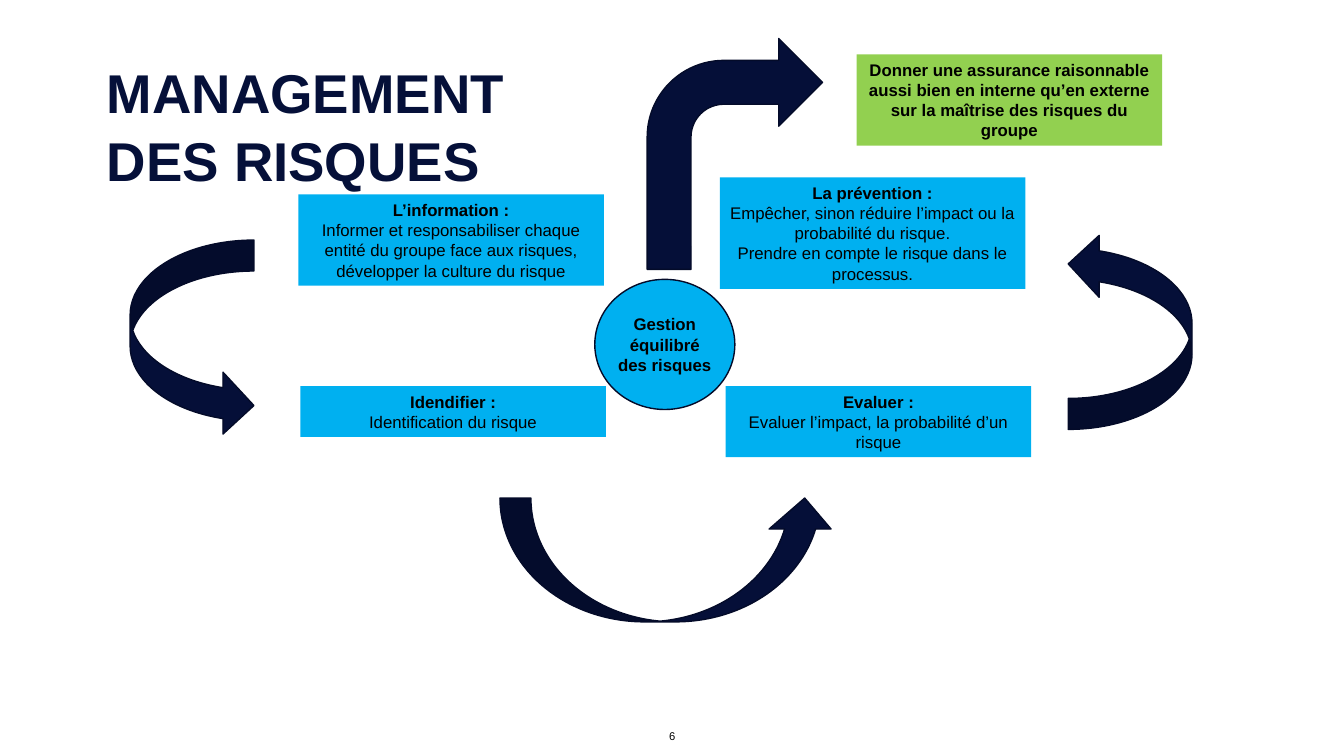
from pptx import Presentation
from pptx import util as u
from pptx.dml.color import RGBColor
from pptx.enum import shapes, text

COLOURS = {"navy": "050F38", "title": "051039", "edge": "040B29",
           "blue": "00B0F0", "green": "92D050", "black": "000000"}
KIND = shapes.MSO_SHAPE
FONT = "Arial"

# Content: lengths in cm
TITLE = "MANAGEMENT DES RISQUES"
HUB = "Gestion équilibré des risques"
PAGE_NUMBER = "6"
CARD_WIDTH, LINE_HEIGHT, CARD_PADDING = 7.7, 0.51, 0.26

# Left, top, text lines, fill, bold heading, plain paragraphs
CARDS = [
    (7.52, 4.9, 4, "blue", "L’information :",
     ["Informer et responsabiliser chaque entité du groupe face aux risques, "
      "développer la culture du risque"]),
    (18.14, 4.47, 5, "blue", "La prévention :",
     ["Empêcher, sinon réduire l’impact ou la probabilité du risque.",
      "Prendre en compte le risque dans le processus."]),
    (7.57, 9.73, 2, "blue", "Idendifier :", ["Identification du risque"]),
    (18.29, 9.73, 3, "blue", "Evaluer :",
     ["Evaluer l’impact, la probabilité d’un risque"]),
    (21.59, 1.37, 4, "green",
     "Donner une assurance raisonnable aussi bien en interne qu’en externe "
     "sur la maîtrise des risques du groupe", []),
]

# Preset, left, top, width, height, rotation
ARROWS = [
    (KIND.CURVED_RIGHT_ARROW, 3.28, 6.05, 3.12, 4.95, 0),
    (KIND.CURVED_RIGHT_ARROW, 15.27, 9.88, 3.12, 8.46, 270),
    (KIND.CURVED_RIGHT_ARROW, 26.92, 5.87, 3.12, 4.95, 180),
    (KIND.BENT_ARROW, 16.31, 0.97, 4.42, 5.82, 0),
]


def colour(name):
    return RGBColor.from_string(COLOURS[name])


def add_figure(page, preset, place, fill, outlined=False):
    figure = page.shapes.add_shape(preset, *map(u.Cm, place))
    figure.shadow.inherit = False
    figure.fill.solid()
    figure.fill.fore_color.rgb = colour(fill)
    if outlined:
        figure.line.color.rgb = colour("edge")
        figure.line.width = u.Pt(1)
    else:
        figure.line.fill.background()
    return figure


def write(box, lines, size=12, ink="black", align=text.PP_ALIGN.CENTER, inset=None):
    """Fill a box with (words, bold) paragraphs, centred vertically."""
    frame = box.text_frame
    frame.word_wrap = True
    frame.auto_size = text.MSO_AUTO_SIZE.NONE
    frame.vertical_anchor = text.MSO_ANCHOR.MIDDLE
    if inset is not None:
        frame.margin_left = frame.margin_right = u.Cm(inset)
        frame.margin_top = frame.margin_bottom = u.Cm(inset)
    for index, (words, bold) in enumerate(lines):
        para = frame.add_paragraph() if index else frame.paragraphs[0]
        para.alignment = align
        span = para.add_run()
        span.text = words
        span.font.name = FONT
        span.font.size = u.Pt(size)
        span.font.bold = bold
        span.font.color.rgb = colour(ink)
    return frame


def main():
    deck = Presentation()
    deck.slide_width, deck.slide_height = u.Cm(33.87), u.Cm(19.05)
    page = deck.slides.add_slide(deck.slide_layouts[5])

    # Title
    title = page.shapes.title
    title.left, title.top = u.Cm(2.69), u.Cm(1.4)
    title.width, title.height = u.Cm(13.18), u.Cm(3.48)
    frame = write(title, [(TITLE, True)], 39, "title", text.PP_ALIGN.LEFT, inset=0)
    frame.margin_right = u.Cm(1)
    frame.paragraphs[0].line_spacing = 1.03

    # Page number
    number = page.shapes.add_textbox(u.Cm(13.13), u.Cm(18.24), u.Cm(7.62), u.Cm(0.61))
    write(number, [(PAGE_NUMBER, False)], 8)

    # Central circle
    hub = add_figure(page, KIND.OVAL, (14.99, 7.04, 3.53, 3.28), "blue", outlined=True)
    write(hub, [(HUB, True)], inset=0)

    # Cards, as tall as their lines of text
    for left, top, count, fill, heading, details in CARDS:
        height = count * LINE_HEIGHT + CARD_PADDING
        card = add_figure(page, KIND.RECTANGLE, (left, top, CARD_WIDTH, height), fill)
        write(card, [(heading, True)] + [(detail, False) for detail in details])

    # Arrows
    for preset, left, top, width, height, rotation in ARROWS:
        arrow = add_figure(page, preset, (left, top, width, height), "navy", outlined=True)
        arrow.rotation = rotation

    deck.save("out.pptx")


if __name__ == "__main__":
    main()
